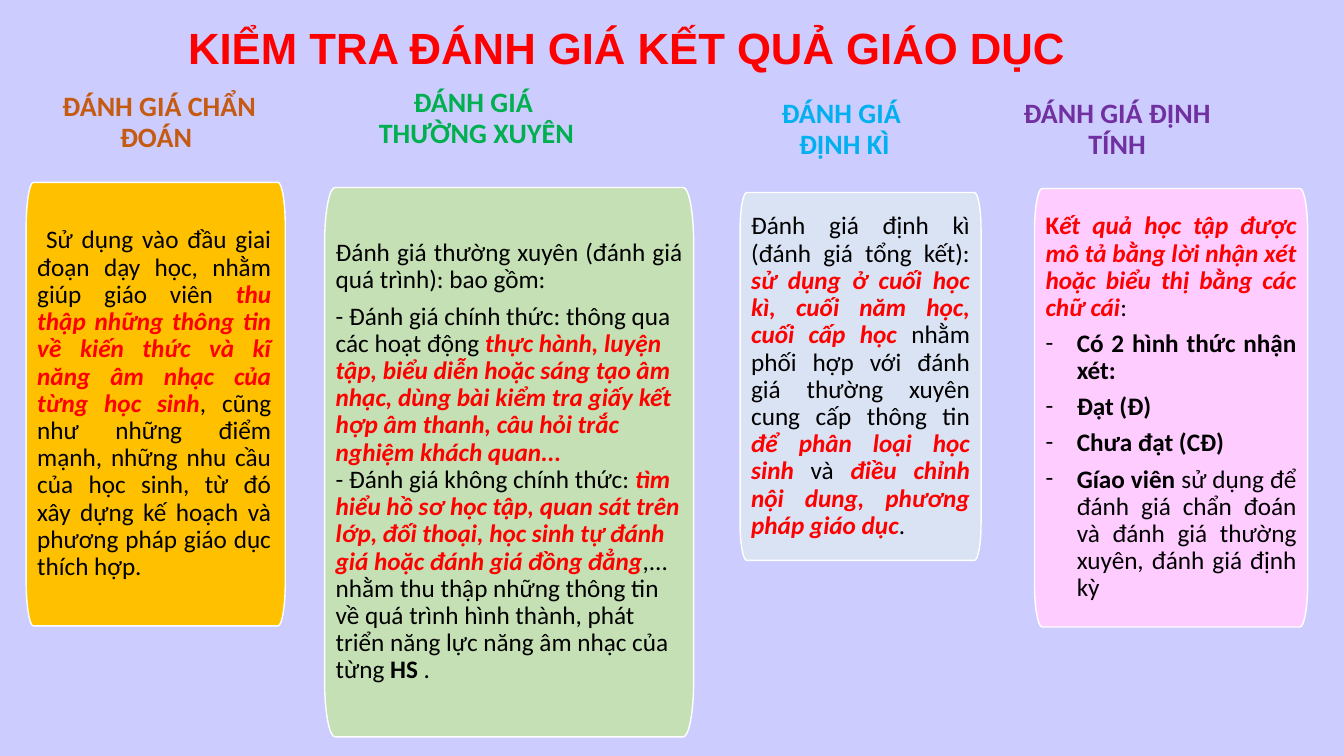
from dataclasses import dataclass

from lxml import etree
from pptx import Presentation
from pptx import util as u
from pptx.dml.color import RGBColor
from pptx.enum import text
from pptx.oxml.ns import qn

PX = 9144
CURVE = 0.55


@dataclass(frozen=True)
class Theme:
    """Colours, fonts and type sizes of the slide."""
    background: str = "CCCCFF"
    outline: str = "FFFFFF"
    body: str = "000000"
    accent: str = "FF0000"
    title_font: str = "Arial"
    body_font: str = "Calibri"
    title_size: float = 31.2
    heading_size: int = 20
    body_size: int = 18
    paragraph_gap: float = 6.3
    line_spacing: float = 0.9


THEME = Theme()

SPAN_STYLES = {
    "plain": (THEME.body, False, False),
    "bold": (THEME.body, True, False),
    "lead": (THEME.accent, True, False),
    "key": (THEME.accent, True, True),
}

COLUMNS = [
    dict(
        heading=["ĐÁNH GIÁ CHẨN ĐOÁN "], heading_box=(21, 91, 274, 62), ink="C55A11",
        card_box=(26, 181, 257, 440), fill="FFC000", right_margin=14,
        body=[("justify", [
            ("plain", " Sử dụng vào đầu giai đoạn dạy học, nhằm giúp giáo viên "),
            ("key", "thu thập những thông tin về kiến thức và kĩ năng âm nhạc của từng học sinh"),
            ("plain", ", cũng như những điểm mạnh, những nhu cầu của học sinh, từ đó xây dựng "
                      "kế hoạch và phương pháp giáo dục thích hợp."),
        ])],
    ),
    dict(
        heading=["ĐÁNH GIÁ ", "THƯỜNG XUYÊN"], heading_box=(322, 77, 301, 82), ink="00B050",
        card_box=(322, 186, 366, 545), fill="C5E0B4", right_margin=11,
        body=[
            ("justify", [("plain", "Đánh giá thường xuyên (đánh giá quá trình): bao gồm:")]),
            ("left", [
                ("plain", "- Đánh giá chính thức: thông qua các hoạt động "),
                ("key", "thực hành, luyện tập, biểu diễn hoặc sáng tạo âm nhạc, dùng bài kiểm tra "
                        "giấy kết hợp âm thanh, câu hỏi trắc nghiệm khách quan..."),
                ("break", ""),
                ("plain", "- Đánh giá không chính thức: "),
                ("key", "tìm hiểu hồ sơ học tập, quan sát trên lớp, đối thoại, học sinh tự đánh "
                        "giá hoặc đánh giá đồng đẳng"),
                ("plain", ",... nhằm thu thập những thông tin về quá trình hình thành, phát triển "
                          "năng lực năng âm nhạc của từng "),
                ("bold", "HS "),
                ("plain", "."),
            ]),
        ],
    ),
    dict(
        heading=["ĐÁNH GIÁ ", "ĐỊNH KÌ"], heading_box=(705, 91, 265, 76), ink="00B0F0",
        card_box=(734, 191, 239, 365), fill="DAE3F3", right_margin=11,
        body=[("justify", [
            ("plain", "Đánh giá định kì (đánh giá tổng kết): "),
            ("key", "sử dụng ở cuối học kì, cuối năm học, cuối cấp học"),
            ("plain", " nhằm phối hợp với đánh giá thường xuyên cung cấp thông tin "),
            ("key", "để phân loại học sinh"),
            ("plain", " và "),
            ("key", "điều chỉnh nội dung, phương pháp giáo dục"),
            ("plain", "."),
        ])],
    ),
    dict(
        heading=["ĐÁNH GIÁ ĐỊNH TÍNH"], heading_box=(1005, 79, 206, 100), ink="7030A0",
        card_box=(1026, 187, 271, 435), fill="FFCCFF", right_margin=11,
        body=[
            ("justify", [
                ("lead", "K"),
                ("key", "ết quả học tập được mô tả bằng lời nhận xét hoặc biểu thị bằng các chữ cái"),
                ("plain", ": "),
            ]),
            ("bullet", [("bold", "Có 2 hình thức nhận xét: ")]),
            ("bullet", [("bold", "Đạt (Đ)")]),
            ("bullet", [("bold", "Chưa đạt (CĐ)")]),
            ("bullet", [
                ("bold", "Gíao viên"),
                ("plain", " sử dụng để đánh giá chẩn đoán và đánh giá thường xuyên, đánh giá định kỳ"),
            ]),
        ],
    ),
]


def to_emu(box):
    """Turn a px box into EMU lengths."""
    return [length * PX for length in box]


def style_heading(para, font_name, size, color):
    """Format a centred bold line."""
    para.alignment = text.PP_ALIGN.CENTER
    para.line_spacing = THEME.line_spacing
    font = para.font
    font.name, font.size, font.bold = font_name, u.Pt(size), True
    font.color.rgb = RGBColor.from_string(color)


def add_title(page, box):
    """Place and format the slide title."""
    title = page.shapes.title
    title.left, title.top, title.width, title.height = to_emu(box)
    frame = title.text_frame
    frame.text = "KIỂM TRA ĐÁNH GIÁ KẾT QUẢ GIÁO DỤC"
    frame.vertical_anchor = text.MSO_ANCHOR.MIDDLE
    frame.auto_size = text.MSO_AUTO_SIZE.NONE
    style_heading(frame.paragraphs[0], THEME.title_font, THEME.title_size, THEME.accent)


def add_heading(page, box, lines, color):
    """Place a column heading centred in its box."""
    frame = page.shapes.add_textbox(*to_emu(box)).text_frame
    frame.word_wrap = True
    frame.vertical_anchor = text.MSO_ANCHOR.MIDDLE
    frame.text = "\n".join(lines)
    for para in frame.paragraphs:
        style_heading(para, THEME.body_font, THEME.heading_size, color)


def add_bullet(para):
    """Give a paragraph a hanging dash."""
    properties = para._p.get_or_add_pPr()
    properties.set("marL", str(31 * PX))
    properties.set("indent", str(-31 * PX))
    etree.SubElement(properties, qn("a:buFont")).set("typeface", THEME.body_font)
    etree.SubElement(properties, qn("a:buChar")).set("char", "-")


def fill_paragraph(para, kind, spans):
    """Write styled spans into a body paragraph."""
    para.alignment = text.PP_ALIGN.LEFT if kind == "left" else text.PP_ALIGN.JUSTIFY
    para.line_spacing = THEME.line_spacing
    para.space_after = u.Pt(THEME.paragraph_gap)
    if kind == "bullet":
        add_bullet(para)
    para.font.name, para.font.size = THEME.body_font, u.Pt(THEME.body_size)
    for style, words in spans:
        if style == "break":
            para.add_line_break()
            continue
        span = para.add_run()
        span.text = words
        color, span.font.bold, span.font.italic = SPAN_STYLES[style]
        span.font.color.rgb = RGBColor.from_string(color)


def round_corner(segment, start, corner, end):
    """Replace a straight corner cut with a curve."""
    curve = etree.Element(qn("a:cubicBezTo"))
    controls = [[p + CURVE * (c - p) for p, c in zip(point, corner)] for point in (start, end)]
    for x, y in (*controls, end):
        etree.SubElement(curve, qn("a:pt"), x=str(round(x)), y=str(round(y)))
    segment.getparent().replace(segment, curve)


def build_card(page, box):
    """Draw a box with tall elliptical corners."""
    left, top, width, height = to_emu(box)
    rx, ry = width * 0.028, height * 0.1
    points = [(0, ry), (rx, 0), (width - rx, 0), (width, ry), (width, height - ry),
              (width - rx, height), (rx, height), (0, height - ry)]
    corners = [(0, 0), (width, 0), (width, height), (0, height)]
    builder = page.shapes.build_freeform(*points[0])
    builder.add_line_segments(points[1:] + points[:1], close=True)
    card = builder.convert_to_shape(left, top)
    segments = list(card._element.iter(qn("a:lnTo")))
    for index, corner in enumerate(corners):
        start, end = points[2 * index:2 * index + 2]
        round_corner(segments[2 * index], start, corner, end)
    return card


def add_card(page, box, fill, body, right_margin):
    """Format a rounded card and its body text."""
    card = build_card(page, box)
    card.shadow.inherit = False
    card.fill.solid()
    card.fill.fore_color.rgb = RGBColor.from_string(fill)
    card.line.color.rgb = RGBColor.from_string(THEME.outline)
    card.line.width = u.Pt(1)
    frame = card.text_frame
    frame.word_wrap = True
    frame.vertical_anchor = text.MSO_ANCHOR.MIDDLE
    frame.margin_left, frame.margin_right = 11 * PX, right_margin * PX
    frame.margin_top = frame.margin_bottom = 9 * PX
    for index, (kind, spans) in enumerate(body):
        para = frame.add_paragraph() if index else frame.paragraphs[0]
        fill_paragraph(para, kind, spans)


def main():
    """Build and save the deck."""
    deck = Presentation()
    deck.slide_width, deck.slide_height = 1333 * PX, 750 * PX
    page = deck.slides.add_slide(deck.slide_layouts[5])
    page.background.fill.solid()
    page.background.fill.fore_color.rgb = RGBColor.from_string(THEME.background)
    add_title(page, (159, 0, 925, 100))
    for column in COLUMNS:
        add_card(page, column["card_box"], column["fill"], column["body"], column["right_margin"])
        add_heading(page, column["heading_box"], column["heading"], column["ink"])
    deck.save("out.pptx")


if __name__ == "__main__":
    main()
